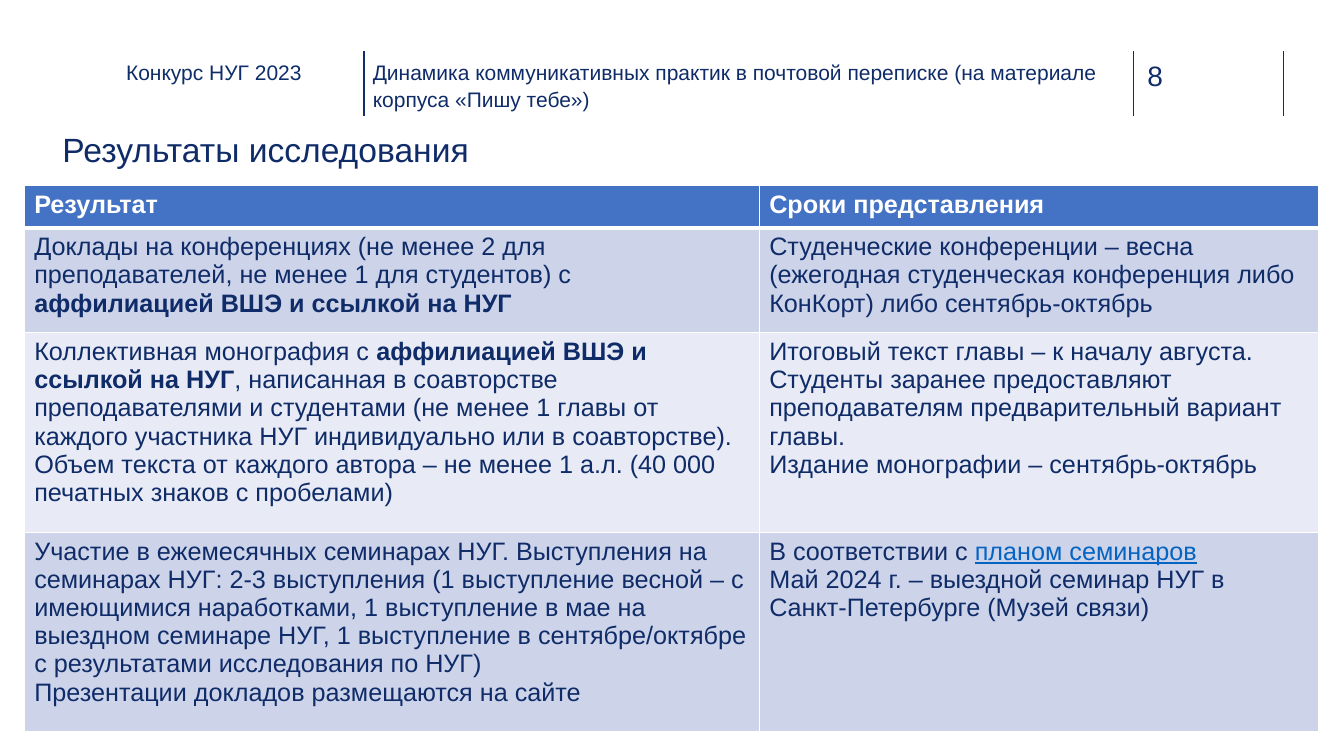
"""Build the slide on research results and their deadlines."""
from lxml import etree
from pptx import Presentation
from pptx.dml.color import RGBColor
from pptx.enum.shapes import MSO_CONNECTOR
from pptx.oxml.ns import qn
from pptx.util import Inches, Pt

STRAIGHT = MSO_CONNECTOR.STRAIGHT
THEME = {
    "font": "Arial", "navy": "0F2C68", "label": "0E2D69", "rule": "102D69",
    "white": "FFFFFF", "header": "4472C4", "bands": ("CDD4EA", "E8EBF5"),
    "link": "0563C1", "small": 15, "body": 18, "number": 20, "title": 24,
}
BOLD = {"bold": True}
LINK = {"color": THEME["link"], "underline": True}

presentation = Presentation()
presentation.slide_width, presentation.slide_height = Inches(13.33), Inches(7.5)
COLUMN = presentation.slide_width / 100
ROW = presentation.slide_height / 100
slide = presentation.slides.add_slide(presentation.slide_layouts[6])


def place(left, top, width, height):
    """Turn grid columns and rows into slide lengths."""
    return int(left * COLUMN), int(top * ROW), int(width * COLUMN), int(height * ROW)


def write(frame, paragraphs, size=THEME["body"], color=THEME["navy"], bold=False,
          margins=(0, 0), line_spacing=None):
    """Fill a text frame with paragraphs, each a list of (text, format) runs."""
    frame.word_wrap = True
    frame.margin_left = frame.margin_right = Inches(margins[0])
    frame.margin_top = frame.margin_bottom = Inches(margins[1])
    for index, runs in enumerate(paragraphs):
        paragraph = frame.paragraphs[0] if index == 0 else frame.add_paragraph()
        if line_spacing:
            paragraph.line_spacing = line_spacing
        for text, style in runs:
            run = paragraph.add_run()
            run.text = text
            run.font.name = THEME["font"]
            run.font.size = Pt(size)
            run.font.bold = style.get("bold", bold)
            run.font.underline = style.get("underline", False)
            run.font.color.rgb = RGBColor.from_string(style.get("color", color))


for column in (27.08, 84.32, 95.5):
    left, top, _, height = place(column, 6.8, 0, 8.53)
    divider = slide.shapes.add_connector(STRAIGHT, left, top, left, top + height)
    divider.line.color.rgb = RGBColor.from_string(THEME["rule"])
    divider.line.width = Pt(1)
    etree.SubElement(divider.element.spPr, qn("a:effectLst"))

labels = [
    ("8", (85.37, 7.73, 5.48, 4.53), {"size": THEME["number"], "color": THEME["rule"]}),
    ("Конкурс НУГ 2023", (9.38, 7.87, 15.6, 6),
     {"size": THEME["small"], "color": THEME["label"]}),
    ("Результаты исследования", (4.65, 17.07, 90.7, 6), {"size": THEME["title"]}),
    ("Динамика коммуникативных практик в почтовой переписке (на материале корпуса «Пишу тебе»)",
     (27, 6.27, 57.31, 9.73),
     {"size": THEME["small"], "margins": (0.1, 0.1), "line_spacing": 1.08}),
]
for text, box, style in labels:
    write(slide.shapes.add_textbox(*place(*box)).text_frame, [[(text, {})]], **style)

results = [
    ([[("Результат", {})]], [[("Сроки представления", {})]]),
    ([[("Доклады на конференциях (не менее 2 для преподавателей, не менее 1 для студентов) с ", {}),
       ("аффилиацией ВШЭ и ссылкой на НУГ", BOLD)]],
     [[("Студенческие конференции – весна (ежегодная студенческая конференция либо КонКорт) "
        "либо сентябрь-октябрь", {})]]),
    ([[("Коллективная монография с ", {}),
       ("аффилиацией ВШЭ и ссылкой на НУГ", BOLD),
       (", написанная в соавторстве преподавателями и студентами (не менее 1 главы от каждого "
        "участника НУГ индивидуально или в соавторстве). Объем текста от каждого автора – "
        "не менее 1 а.л. (40 000 печатных знаков с пробелами)", {})]],
     [[("Итоговый текст главы – к началу августа.", {})],
      [("Студенты заранее предоставляют преподавателям предварительный вариант главы.", {})],
      [("Издание монографии – сентябрь-октябрь", {})]]),
    ([[("Участие в ежемесячных семинарах НУГ. Выступления на семинарах НУГ: 2-3 выступления "
        "(1 выступление весной – с имеющимися наработками, 1 выступление в мае на выездном "
        "семинаре НУГ, 1 выступление в сентябре/октябре с результатами исследования по НУГ)", {})],
      [("Презентации докладов размещаются на сайте", {})]],
     [[("В соответствии с ", {}), ("планом семинаров", LINK)],
      [("Май 2024 г. – выездной семинар НУГ в Санкт-Петербурге (Музей связи)", {})]]),
]
column_widths = (54.69, 41.63)
row_heights = (5.6, 13.87, 26.4, 26.4)
table = slide.shapes.add_table(
    len(row_heights), len(column_widths),
    *place(1.8, 24.53, sum(column_widths), sum(row_heights))).table
for table_column, width in zip(table.columns, column_widths):
    table_column.width = int(width * COLUMN)
for table_row, height in zip(table.rows, row_heights):
    table_row.height = int(height * ROW)

for row_index, result in enumerate(results):
    is_header = row_index == 0
    fill = THEME["header"] if is_header else THEME["bands"][(row_index - 1) % 2]
    edges = {"lnL": 1, "lnR": 1, "lnT": 3 if row_index == 1 else 1, "lnB": 3 if is_header else 1}
    for column_index, paragraphs in enumerate(result):
        cell = table.cell(row_index, column_index)
        properties = cell._tc.get_or_add_tcPr()
        for edge, points in edges.items():
            border = etree.SubElement(properties, qn(f"a:{edge}"), w=str(Pt(points)))
            border_fill = etree.SubElement(border, qn("a:solidFill"))
            etree.SubElement(border_fill, qn("a:srgbClr"), val=THEME["white"])
        cell.fill.solid()
        cell.fill.fore_color.rgb = RGBColor.from_string(fill)
        cell.margin_left = cell.margin_right = Inches(0.1)
        cell.margin_top = cell.margin_bottom = Inches(0.05)
        write(cell.text_frame, paragraphs, bold=is_header,
              color=THEME["white"] if is_header else THEME["navy"], margins=(0.1, 0.05))

presentation.save("out.pptx")
